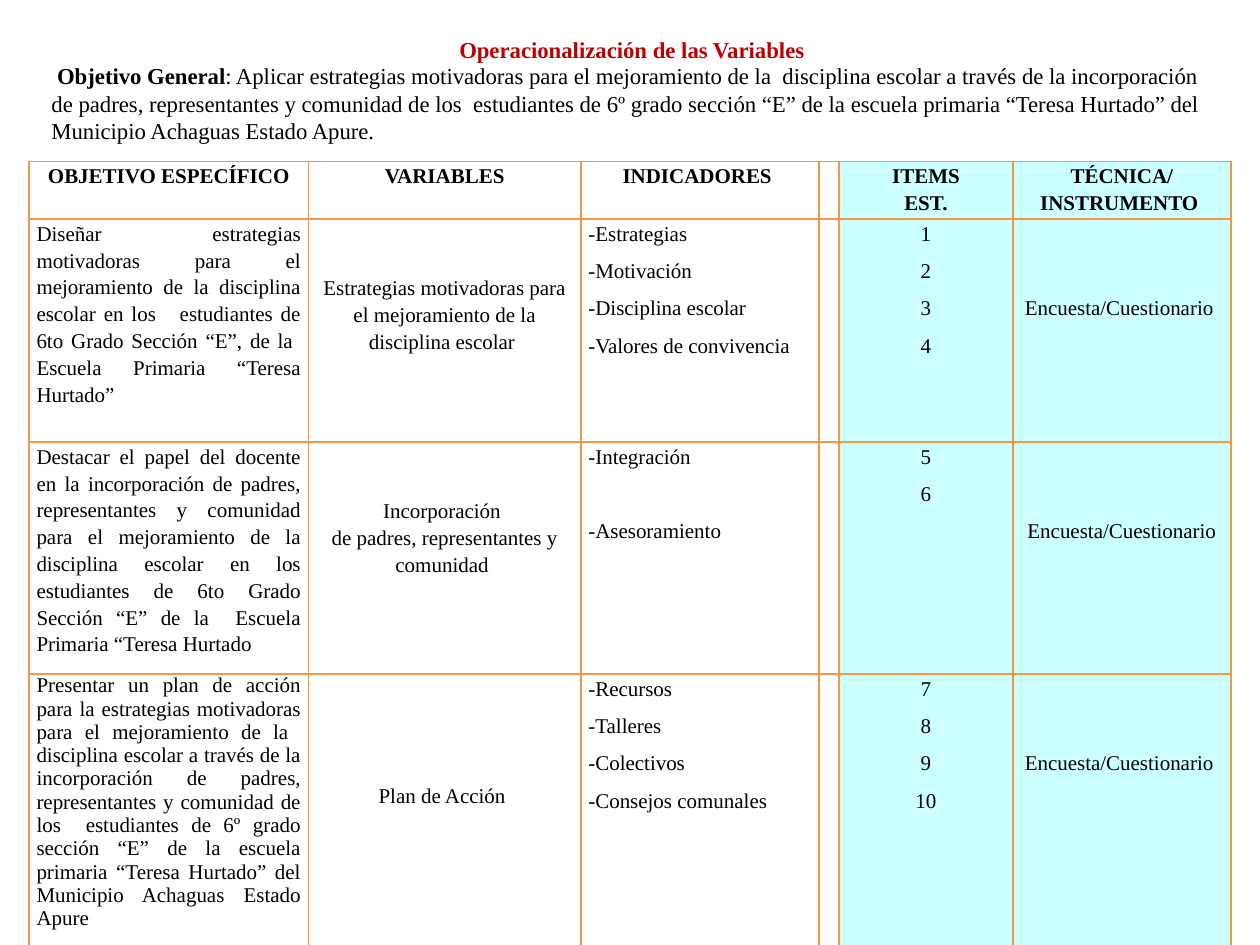
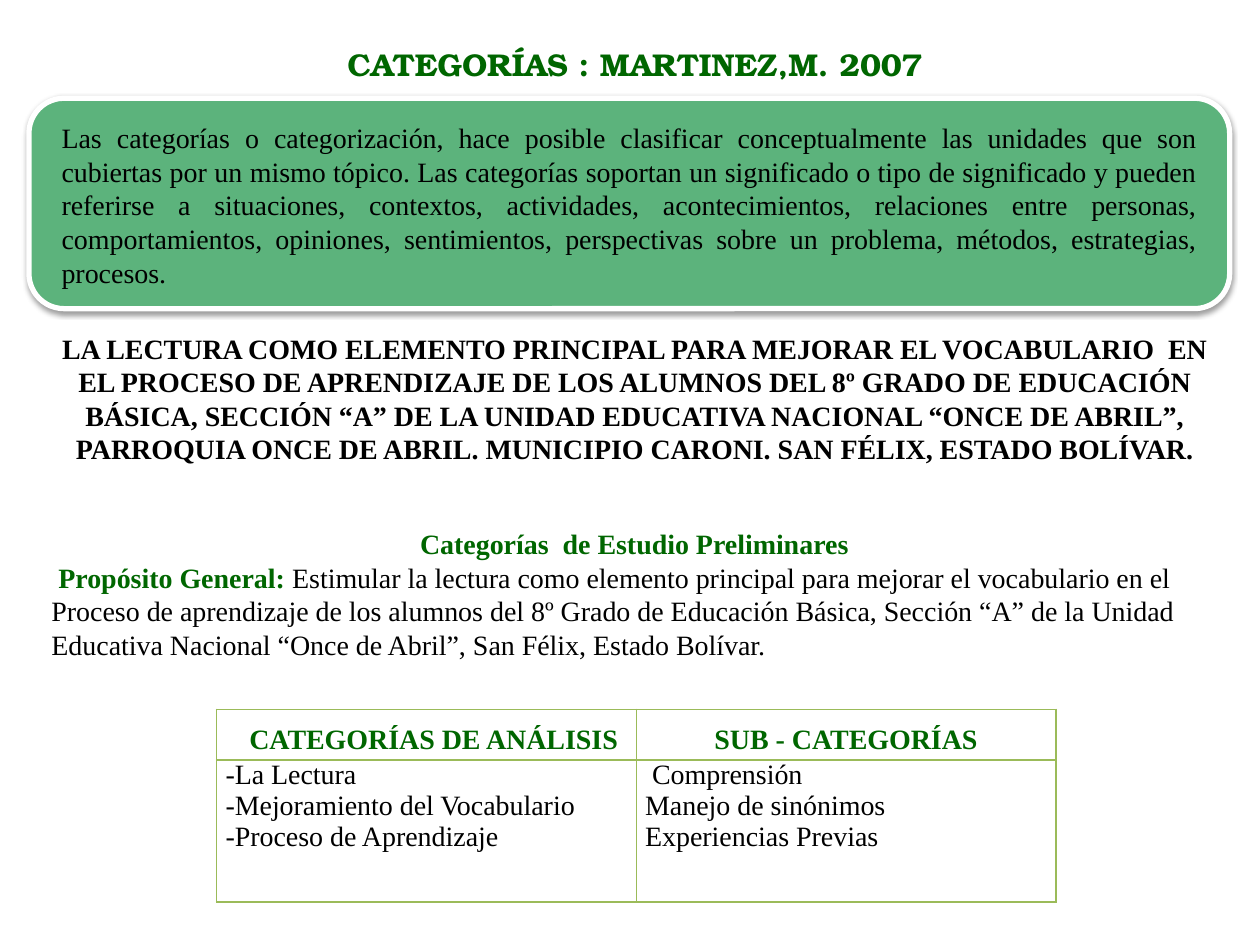
import dataclasses

import lxml.etree
import pptx
import pptx.dml.color
import pptx.enum.shapes
import pptx.enum.text
import pptx.oxml
import pptx.oxml.ns
import pptx.util

ALIGN = pptx.enum.text.PP_ALIGN
FIT = pptx.enum.text.MSO_AUTO_SIZE
CENTER = {"alignment": ALIGN.CENTER}
JUSTIFY = {"alignment": ALIGN.JUSTIFY}
LEFT = {"alignment": ALIGN.LEFT}

# The slide is a grid of 100 columns by 75 rows
SLIDE_WIDTH = pptx.util.Inches(10)
SLIDE_HEIGHT = pptx.util.Inches(7.5)
UNIT = SLIDE_WIDTH / 100

BLACK, RED, GREEN, WHITE = "000000", "C00000", "006600", "FFFFFF"
AQUA, PANEL_GREEN = "CCFFFF", "5CB37C"
ORANGE_RULE, GREEN_RULE = "F79646", "9BBB59"

BODY = {"name": "Times New Roman", "size": 16, "bold": False, "color": BLACK}
BOLD = {**BODY, "bold": True}
GREEN_BOLD = {**BOLD, "color": GREEN}


def grid(units):
    return round(units * UNIT)


@dataclasses.dataclass
class Box:
    """A region of the slide, in grid units."""
    left: float
    top: float
    width: float
    height: float

    def emu(self):
        return [grid(side) for side in dataclasses.astuple(self)]

    def inset(self, across, down):
        return Box(self.left + across, self.top + down,
                   self.width - 2 * across, self.height - 2 * down)


def colour(code):
    return pptx.dml.color.RGBColor.from_string(code)


def format_font(font, style):
    for key, value in style.items():
        if key == "color":
            font.color.rgb = colour(value)
        elif key == "size":
            font.size = pptx.util.Pt(value)
        else:
            setattr(font, key, value)


def write_paras(frame, paras):
    """Each para is a format dict and a list of (text, style) spans."""
    for index, (layout, spans) in enumerate(paras):
        para = frame.add_paragraph() if index else frame.paragraphs[0]
        for key, value in layout.items():
            setattr(para, key, value)
        for text, style in spans:
            span = para.add_run()
            span.text = text
            format_font(span.font, style)


def plain_paras(lines, layout, style):
    return [(layout, [(line, style)]) for line in lines]


def add_page(deck):
    return deck.slides.add_slide(deck.slide_layouts[5])


def write_title(page, box, text, style):
    title = page.shapes.title
    title.left, title.top, title.width, title.height = box.emu()
    frame = title.text_frame
    frame.word_wrap = True
    frame.auto_size = FIT.NONE
    frame.vertical_anchor = pptx.enum.text.MSO_ANCHOR.TOP
    write_paras(frame, [(CENTER, [(text, style)])])


def write_text(page, box, paras):
    frame = page.shapes.add_textbox(*box.emu()).text_frame
    frame.word_wrap = True
    frame.auto_size = FIT.SHAPE_TO_FIT_TEXT
    write_paras(frame, paras)


def draw_panel(page, box, text):
    """Rounded panel with a soft shadow and justified text inside."""
    panel = page.shapes.add_shape(
        pptx.enum.shapes.MSO_SHAPE.ROUNDED_RECTANGLE, *box.emu())
    panel.fill.solid()
    panel.fill.fore_color.rgb = colour(PANEL_GREEN)
    panel.line.color.rgb = colour(WHITE)
    panel.line.width = pptx.util.Pt(3)
    panel.shadow.inherit = False
    effects = panel._element.spPr.find(pptx.oxml.ns.qn("a:effectLst"))
    effects.append(pptx.oxml.parse_xml(
        f'<a:outerShdw {pptx.oxml.ns.nsdecls("a")} blurRad="{pptx.util.Pt(3.1)}" '
        f'dist="{pptx.util.Pt(1.6)}" dir="5400000" rotWithShape="0">'
        f'<a:srgbClr val="{BLACK}"><a:alpha val="38000"/></a:srgbClr></a:outerShdw>'))
    write_text(page, box.inset(1.6, 1.3), [(JUSTIFY, [(text, BODY)])])


def rule_cell(cell, code):
    """One-point borders on all four sides; they come before the fill."""
    properties = cell._tc.get_or_add_tcPr()
    for index, side in enumerate(("lnL", "lnR", "lnT", "lnB")):
        border = lxml.etree.Element(pptx.oxml.ns.qn(f"a:{side}"), w=str(pptx.util.Pt(1)))
        fill = lxml.etree.SubElement(border, pptx.oxml.ns.qn("a:solidFill"))
        lxml.etree.SubElement(fill, pptx.oxml.ns.qn("a:srgbClr"), val=code)
        properties.insert(index, border)


def draw_table(page, box, widths, heights, rows, rule, margin, fills=()):
    """Each cell is None or a dict with paras and optional top and left margins."""
    table = page.shapes.add_table(len(rows), len(widths), *box.emu()).table
    table.first_row = table.horz_banding = False
    for column, width in zip(table.columns, widths):
        column.width = grid(width)
    for row, height in zip(table.rows, heights):
        row.height = grid(height)
    for row_index, row in enumerate(rows):
        for column_index, content in enumerate(row):
            cell = table.cell(row_index, column_index)
            content = content or {"paras": []}
            cell.margin_left = grid(content.get("left", margin))
            cell.margin_right = grid(margin)
            cell.margin_top = grid(content.get("top", 0))
            cell.margin_bottom = 0
            if column_index in fills:
                cell.fill.solid()
                cell.fill.fore_color.rgb = colour(AQUA)
            else:
                cell.fill.background()
            rule_cell(cell, rule)
            write_paras(cell.text_frame, content["paras"])


# Variables table: one row for each specific objective
VARIABLE_HEADERS = [["OBJETIVO ESPECÍFICO"], ["VARIABLES"], ["INDICADORES "], None,
                    ["ITEMS", "EST."], ["TÉCNICA/", "INSTRUMENTO "]]
# Objective, its line spacing, variable, variable offset, indicators, items, technique
OBJECTIVES = [
    ("Diseñar estrategias motivadoras para el mejoramiento de la disciplina escolar en los   "
     "estudiantes de 6to Grado Sección “E”, de la  Escuela Primaria “Teresa Hurtado”", 1.15,
     ["Estrategias motivadoras para el mejoramiento de la disciplina escolar "], 4.3,
     ["-Estrategias", "-Motivación", "-Disciplina escolar ", "-Valores de convivencia "],
     range(1, 5), "Encuesta/Cuestionario "),
    ("Destacar el papel del docente en la incorporación de padres, representantes y comunidad "
     "para el mejoramiento de la disciplina escolar en los estudiantes de 6to Grado Sección “E” "
     "de la  Escuela Primaria “Teresa Hurtado", 1.15,
     ["Incorporación ", "de padres, representantes y comunidad "], 4.3,
     ["-Integración", "-Asesoramiento "], range(5, 7), "Encuesta/Cuestionario"),
    ("Presentar un plan de acción para la estrategias motivadoras para el mejoramiento de la  "
     "disciplina escolar a través de la incorporación de padres, representantes y comunidad de "
     "los  estudiantes de 6º grado sección “E” de la escuela primaria “Teresa Hurtado” del "
     "Municipio Achaguas Estado Apure", 1.0,
     ["Plan de Acción "], 8.5,
     ["-Recursos", "-Talleres", "-Colectivos", "-Consejos comunales"],
     range(7, 11), "Encuesta/Cuestionario "),
]


def variables_table(page, box):
    body, head = {**BODY, "size": 12}, {**BOLD, "size": 12}
    loose = {"line_spacing": 1.15}
    spaced = {**loose, "space_after": pptx.util.Pt(6)}
    wide = {**loose, "space_after": pptx.util.Pt(27.3)}
    rows = [[lines and {"paras": plain_paras(lines, {**CENTER, **loose}, head)}
             for lines in VARIABLE_HEADERS]]
    for goal, spacing, variable, offset, indicators, items, technique in OBJECTIVES:
        gap = wide if len(indicators) == 2 else spaced
        rows.append([
            {"paras": plain_paras([goal], {**JUSTIFY, "line_spacing": spacing}, body)},
            {"paras": plain_paras(variable, {**CENTER, **loose}, body), "top": offset},
            {"paras": plain_paras(indicators, {**LEFT, **gap}, body)},
            None,
            {"paras": plain_paras(map(str, items), {**CENTER, **spaced}, body)},
            {"paras": plain_paras([technique], {**CENTER, **spaced}, body), "top": 5.9},
        ])
    draw_table(page, box, [22.2, 21.6, 18.9, 1.6, 13.8, 17.3], [4.6, 17.7, 18.4, 22.1],
               rows, ORANGE_RULE, 0.6, fills=(4, 5))


def variables_page(deck):
    page = add_page(deck)
    body, head = {**BODY, "size": 13}, {**BOLD, "size": 13}
    variables_table(page, Box(2.3, 12.8, 95.3, 62.8))
    write_title(page, Box(3.1, 2.3, 94.5, 3.1), "Operacionalización de las Variables ",
                {**head, "color": RED})
    write_text(page, Box(3.1, 4.45, 94.5, 7.6), [(LEFT, [
        (" Objetivo General", head),
        (": Aplicar estrategias motivadoras para el mejoramiento de la  disciplina escolar a "
         "través de la incorporación de padres, representantes y comunidad de los  estudiantes "
         "de 6º grado sección “E” de la escuela primaria “Teresa Hurtado” del Municipio Achaguas "
         "Estado Apure.", body)])])


def categories_table(page, box):
    head = {**CENTER, "line_spacing": 1.5}
    categories = ["-La Lectura", "-Mejoramiento del Vocabulario", "-Proceso de Aprendizaje"]
    subcategories = [" Comprensión", "Manejo de sinónimos", "Experiencias Previas"]
    rows = [
        [{"paras": plain_paras(["CATEGORÍAS DE ANÁLISIS "], head, GREEN_BOLD), "left": 2.4},
         {"paras": plain_paras(["SUB - CATEGORÍAS"], head, GREEN_BOLD)}],
        [{"paras": plain_paras(lines, LEFT, BODY)} for lines in (categories, subcategories)],
    ]
    draw_table(page, box, [box.width / 2] * 2, [3.9, 11.3], rows, GREEN_RULE, 0.7)


def categories_page(deck):
    page = add_page(deck)
    write_title(page, Box(25, 3.1, 50.8, 4), "CATEGORÍAS : MARTINEZ,M. 2007",
                {**GREEN_BOLD, "name": "TeX Gyre Bonum", "size": 18})
    draw_panel(page, Box(2.3, 7.8, 95.3, 16.7),
               "Las categorías o categorización, hace posible clasificar conceptualmente las "
               "unidades que son cubiertas por un mismo tópico. Las categorías soportan un "
               "significado o tipo de significado y pueden referirse a situaciones, contextos, "
               "actividades, acontecimientos, relaciones entre personas, comportamientos, "
               "opiniones, sentimientos, perspectivas sobre un problema, métodos, estrategias, "
               "procesos. ")
    # Study title
    write_text(page, Box(3.9, 25.8, 93, 14.5), [(CENTER, [
        ("LA LECTURA COMO ELEMENTO PRINCIPAL PARA MEJORAR EL VOCABULARIO  EN EL PROCESO DE "
         "APRENDIZAJE DE LOS ALUMNOS DEL 8º GRADO DE EDUCACIÓN BÁSICA, SECCIÓN “A” DE LA UNIDAD "
         "EDUCATIVA NACIONAL “ONCE DE ABRIL”, PARROQUIA ONCE DE ABRIL. MUNICIPIO CARONI. SAN "
         "FÉLIX, ESTADO BOLÍVAR.", BOLD)])])
    # General purpose
    write_text(page, Box(3.1, 41.3, 94.5, 11.8), [
        (CENTER, [("Categorías  de Estudio Preliminares", GREEN_BOLD)]),
        (LEFT, [
            (" Propósito General: ", GREEN_BOLD),
            ("Estimular la lectura como elemento principal para mejorar el vocabulario en el "
             "Proceso de aprendizaje de los alumnos del 8º Grado de Educación Básica, Sección "
             "“A” de la Unidad Educativa Nacional “Once de Abril”, San Félix, Estado Bolívar.",
             BODY)])])
    categories_table(page, Box(17.2, 56.3, 66.6, 15.2))


def main():
    deck = pptx.Presentation()
    deck.slide_width, deck.slide_height = SLIDE_WIDTH, SLIDE_HEIGHT
    variables_page(deck)
    categories_page(deck)
    deck.save("out.pptx")


if __name__ == "__main__":
    main()
